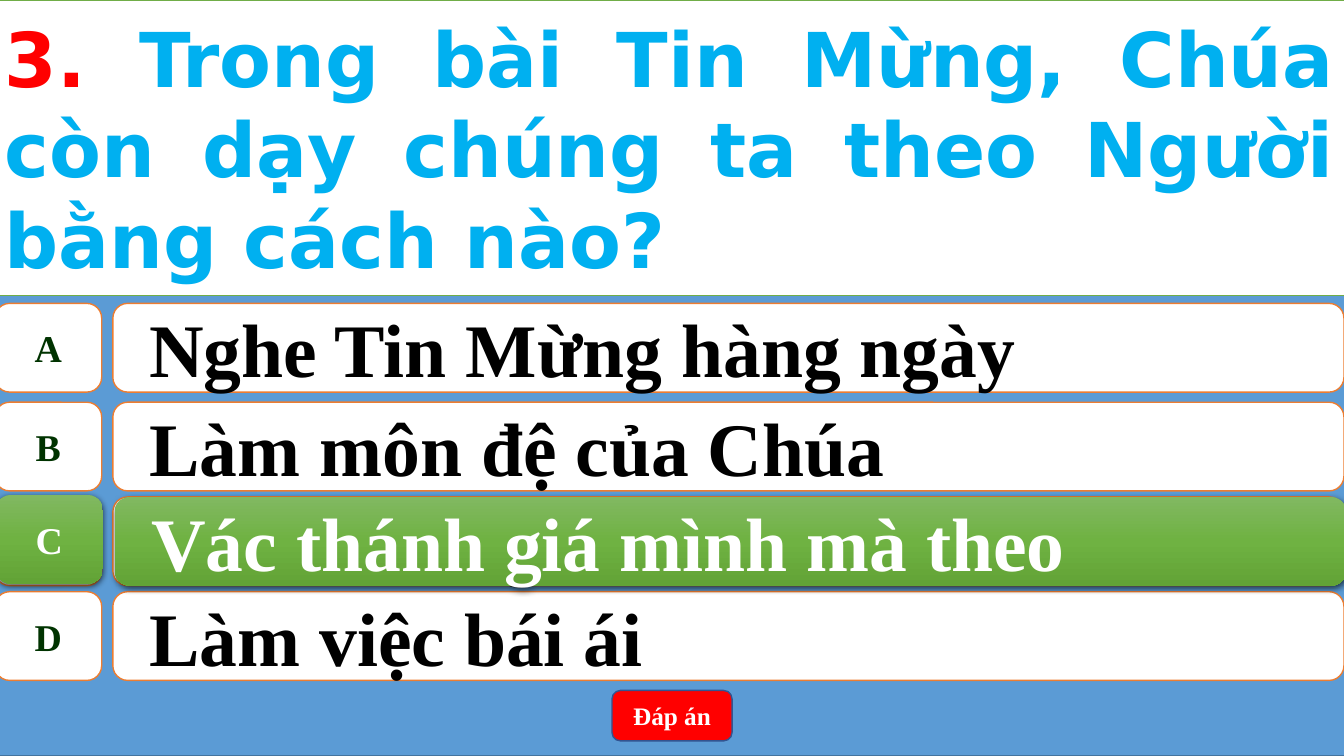
"""Build a quiz slide with one question, four options and the revealed answer."""
import copy
from dataclasses import dataclass
from typing import NamedTuple

import lxml.etree
import pptx
import pptx.dml.color
import pptx.enum.shapes
import pptx.enum.text
import pptx.oxml.ns
import pptx.shapes.autoshape
import pptx.slide
import pptx.util

SLIDE_WIDTH = pptx.util.Inches(13.33)
SLIDE_HEIGHT = pptx.util.Inches(7.5)
Kind = pptx.enum.shapes.MSO_SHAPE
Align = pptx.enum.text.PP_ALIGN
qn = pptx.oxml.ns.qn


@dataclass(frozen=True)
class Theme:
    backdrop: str = "5B9BD5"
    backdrop_edge: str = "43739E"
    panel: str = "FFFFFF"
    option_edge: str = "ED7D31"
    question_edge: str = "70AD47"
    button: str = "FF0000"
    button_edge: str = "325491"
    letter: str = "003300"
    option: str = "000000"
    number: str = "FF0000"
    question: str = "00B0F0"
    light: str = "FFFFFF"
    shadow: str = "000000"
    correct: tuple[str, ...] = ("81B861", "6FB242", "62A336")
    serif: str = "Times New Roman"
    sans: str = "DejaVu Sans"
    large: int = 54
    medium: int = 27
    small: int = 18


class Box(NamedTuple):
    """Position and size in percent of the slide."""
    left: float
    top: float
    width: float
    height: float


class Run(NamedTuple):
    text: str
    color: str
    size: int
    font: str


class Option(NamedTuple):
    letter: str
    answer: str
    top: float


THEME = Theme()
LEFT_EDGE = -0.38
FULL_WIDTH = 100.45
ROW_HEIGHT = 11.73
LETTER_WIDTH = 7.95
ANSWER_LEFT = 8.4
ANSWER_WIDTH = 91.6
OPTIONS = (
    Option("A", "Nghe Tin Mừng hàng ngày", 40.13),
    Option("B", "Làm môn đệ của Chúa", 53.2),
    Option("C", "Vác thánh giá mình mà theo", 65.73),
    Option("D", "Làm việc bái ái", 78.27),
)
CORRECT = OPTIONS[2]


def rgb(color: str) -> pptx.dml.color.RGBColor:
    return pptx.dml.color.RGBColor.from_string(color)


def add_panel(slide: pptx.slide.Slide, kind: Kind, box: Box, fill: str,
              edge: str) -> pptx.shapes.autoshape.Shape:
    panel = slide.shapes.add_shape(
        kind,
        round(SLIDE_WIDTH * box.left / 100), round(SLIDE_HEIGHT * box.top / 100),
        round(SLIDE_WIDTH * box.width / 100), round(SLIDE_HEIGHT * box.height / 100))
    panel.shadow.inherit = False
    panel.fill.solid()
    panel.fill.fore_color.rgb = rgb(fill)
    panel.line.color.rgb = rgb(edge)
    panel.line.width = pptx.util.Pt(1)
    return panel


def write(panel: pptx.shapes.autoshape.Shape, align: Align, *runs: Run,
          wrap: bool = True) -> None:
    frame = panel.text_frame
    frame.word_wrap = wrap
    frame.vertical_anchor = pptx.enum.text.MSO_ANCHOR.MIDDLE
    paragraph = frame.paragraphs[0]
    paragraph.alignment = align
    for part in runs:
        run = paragraph.add_run()
        run.text = part.text
        run.font.name = part.font
        run.font.size = pptx.util.Pt(part.size)
        run.font.bold = True
        run.font.color.rgb = rgb(part.color)


def highlight(panel: pptx.shapes.autoshape.Shape) -> None:
    panel.line.fill.background()
    panel.fill.gradient()
    panel.fill.gradient_angle = 270
    properties = panel.element.spPr
    stop_list = properties.find(qn("a:gradFill")).find(qn("a:gsLst"))
    stop_list.insert(1, copy.deepcopy(stop_list[0]))
    for stop, color, position in zip(panel.fill.gradient_stops, THEME.correct, (0, 0.5, 1)):
        stop.color.rgb = rgb(color)
        stop.position = position
    shadow = lxml.etree.SubElement(
        properties.find(qn("a:effectLst")), qn("a:outerShdw"),
        blurRad=str(pptx.util.Pt(4.5)), dist=str(pptx.util.Pt(1.5)),
        dir="5400000", algn="ctr", rotWithShape="0")
    tint = lxml.etree.SubElement(shadow, qn("a:srgbClr"), val=THEME.shadow)
    lxml.etree.SubElement(tint, qn("a:alpha"), val="63000")


def add_option(slide: pptx.slide.Slide, option: Option, letter_box: Box,
               answer_box: Box, correct: bool = False) -> None:
    letter = add_panel(slide, Kind.FLOWCHART_ALTERNATE_PROCESS, letter_box,
                       THEME.panel, THEME.option_edge)
    answer = add_panel(slide, Kind.ROUNDED_RECTANGLE, answer_box,
                       THEME.panel, THEME.option_edge)
    write(letter, Align.CENTER,
          Run(option.letter, THEME.light if correct else THEME.letter,
              THEME.medium, THEME.serif), wrap=False)
    write(answer, Align.LEFT,
          Run(option.answer, THEME.light if correct else THEME.option,
              THEME.large, THEME.serif))
    paragraph = answer.text_frame.paragraphs[0]
    paragraph.level = 1
    indents = paragraph._p.get_or_add_pPr()
    indents.set("marL", str(pptx.util.Inches(0.5)))
    indents.set("indent", str(pptx.util.Inches(-0.28)))
    if correct:
        highlight(letter)
        highlight(answer)


def main() -> None:
    deck = pptx.Presentation()
    deck.slide_width = SLIDE_WIDTH
    deck.slide_height = SLIDE_HEIGHT
    slide = deck.slides.add_slide(deck.slide_layouts[6])

    add_panel(slide, Kind.RECTANGLE, Box(LEFT_EDGE, 0, FULL_WIDTH, 100),
              THEME.backdrop, THEME.backdrop_edge)
    for option in OPTIONS:
        add_option(slide, option,
                   Box(LEFT_EDGE, option.top, LETTER_WIDTH, ROW_HEIGHT),
                   Box(ANSWER_LEFT, option.top, ANSWER_WIDTH, ROW_HEIGHT))
    add_option(slide, CORRECT,
               Box(-0.3, 65.47, LETTER_WIDTH, ROW_HEIGHT),
               Box(8.55, CORRECT.top, ANSWER_WIDTH, ROW_HEIGHT), correct=True)

    reveal = add_panel(slide, Kind.ROUNDED_RECTANGLE, Box(45.54, 91.33, 8.93, 6.67),
                       THEME.button, THEME.button_edge)
    write(reveal, Align.CENTER, Run("Đáp án", THEME.light, THEME.small, THEME.serif))

    question = add_panel(slide, Kind.RECTANGLE, Box(LEFT_EDGE, 0, FULL_WIDTH, 39.07),
                         THEME.panel, THEME.question_edge)
    write(question, Align.JUSTIFY,
          Run("3. ", THEME.number, THEME.large, THEME.sans),
          Run("Trong bài Tin Mừng, Chúa còn dạy chúng ta theo Người bằng cách nào?",
              THEME.question, THEME.large, THEME.sans))
    deck.save("out.pptx")


if __name__ == "__main__":
    main()
